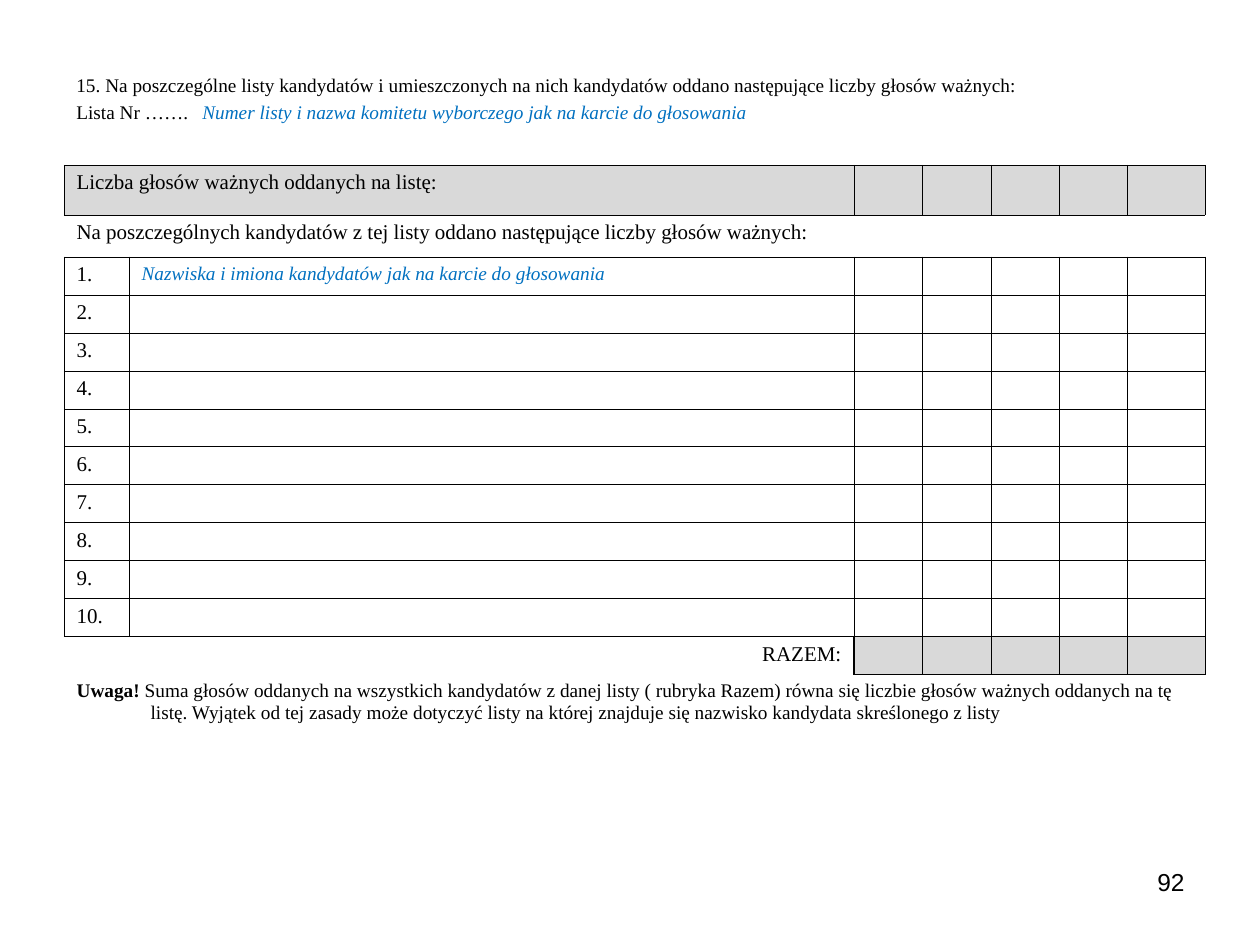
from dataclasses import dataclass
from itertools import cycle, islice
from typing import NamedTuple

from lxml.etree import SubElement
from pptx import Presentation
from pptx.dml.color import RGBColor
from pptx.enum.text import PP_ALIGN as Align
from pptx.oxml.ns import qn
from pptx.util import Emu, Pt

EMU_PER_PX = 914400 / 126


@dataclass(frozen=True)
class Theme:
    black: RGBColor = RGBColor(0, 0, 0)
    blue: RGBColor = RGBColor(0x00, 0x70, 0xC0)
    gray: RGBColor = RGBColor(0xD9, 0xD9, 0xD9)
    white: RGBColor = RGBColor(0xFF, 0xFF, 0xFF)
    serif: str = "Times New Roman"
    sans: str = "Arial"
    note: int = 11
    table: int = 12
    number: int = 14
    thin: float = 0.25
    thick: float = 1


THEME = Theme()


class Span(NamedTuple):
    text: str
    color: RGBColor = THEME.black
    italic: bool = False
    bold: bool = False


class Line(NamedTuple):
    spans: tuple[Span, ...]
    size: int = THEME.note
    font: str = THEME.serif
    align: Align = Align.LEFT
    hanging: int = 0
    tab: int = 0


class Entry(NamedTuple):
    column: int
    last_column: int
    line: Line | None = None
    fill: RGBColor = THEME.white
    borders: dict[str, float] = dict.fromkeys("LRTB", THEME.thin)


def px(length: int) -> Emu:
    return Emu(round(length * EMU_PER_PX))


def write_line(paragraph, line: Line) -> None:
    properties = paragraph._p.get_or_add_pPr()
    if line.hanging:
        properties.set("marL", str(px(line.hanging)))
        properties.set("indent", str(-px(line.hanging)))
    if line.tab:
        tabs = SubElement(properties, qn("a:tabLst"))
        SubElement(tabs, qn("a:tab"), pos=str(px(line.tab)), algn="l")
    paragraph.alignment = line.align
    paragraph.font.name = line.font
    paragraph.font.size = Pt(line.size)
    for span in line.spans:
        run = paragraph.add_run()
        run.text = span.text
        run.font.color.rgb = span.color
        if span.italic:
            run.font.italic = True
        if span.bold:
            run.font.bold = True


def add_text(slide, left: int, top: int, width: int, height: int, lines: list[Line]) -> None:
    frame = slide.shapes.add_textbox(px(left), px(top), px(width), px(height)).text_frame
    frame.word_wrap = True
    for index, line in enumerate(lines):
        paragraph = frame.add_paragraph() if index else frame.paragraphs[0]
        write_line(paragraph, line)
        if index:
            paragraph.space_before = Pt(2.5)


def set_borders(cell, borders: dict[str, float]) -> None:
    properties = cell._tc.get_or_add_tcPr()
    for side in "LRTB":
        width = borders.get(side, 0)
        border = SubElement(properties, qn(f"a:ln{side}"), w=str(Pt(width)))
        if width:
            fill = SubElement(border, qn("a:solidFill"))
            SubElement(fill, qn("a:srgbClr"), val=str(THEME.black))
        else:
            SubElement(border, qn("a:noFill"))


def fill_entry(table, row: int, entry: Entry) -> None:
    first = table.cell(row, entry.column)
    if entry.last_column > entry.column:
        first.merge(table.cell(row, entry.last_column))
    for column in range(entry.column, entry.last_column + 1):
        cell = table.cell(row, column)
        set_borders(cell, entry.borders)
        cell.fill.solid()
        cell.fill.fore_color.rgb = entry.fill
    if entry.line:
        write_line(first.text_frame.paragraphs[0], entry.line)
    else:
        first.margin_top = first.margin_bottom = 0
        first.text_frame.paragraphs[0].font.size = Pt(THEME.table)


def table_line(text: str, align: Align = Align.LEFT) -> Line:
    return Line((Span(text),), THEME.table, align=align)


def digit_boxes(fill: RGBColor, bottom: float = THEME.thin) -> list[Entry]:
    borders = dict.fromkeys("LRT", THEME.thin) | {"B": bottom}
    return [Entry(column, column, None, fill, borders) for column in range(2, 7)]


def table_rows() -> list[list[Entry]]:
    names = Line((Span("Nazwiska i imiona kandydatów jak na karcie do głosowania", THEME.blue, True),))
    warning = Line(
        (
            Span("Uwaga!", bold=True),
            Span(
                " Suma głosów oddanych na wszystkich kandydatów z danej listy ( rubryka Razem) "
                "równa się liczbie głosów ważnych oddanych na tę listę. Wyjątek od tej zasady może "
                "dotyczyć listy na której znajduje się nazwisko kandydata skreślonego z listy"
            ),
        ),
        hanging=74,
    )
    intro = table_line("Na poszczególnych kandydatów z tej listy oddano następujące liczby głosów ważnych:")
    candidates = [
        [Entry(0, 0, table_line(f"{number}.")), Entry(1, 1, names if number == 1 else None)]
        + digit_boxes(THEME.white)
        for number in range(1, 11)
    ]
    return [
        [Entry(0, 1, table_line("Liczba głosów ważnych oddanych na listę:"), THEME.gray)]
        + digit_boxes(THEME.gray),
        [Entry(0, 6, intro, borders={"T": THEME.thin, "B": THEME.thin})],
        *candidates,
        [Entry(0, 1, table_line("RAZEM:", Align.RIGHT), borders={"T": THEME.thin, "R": THEME.thick})]
        + digit_boxes(THEME.gray, THEME.thick),
        [Entry(0, 6, warning, borders={"T": 0})],
    ]


def add_vote_table(slide) -> None:
    widths = [65, 725, 68, 69, 68, 68, 78]
    heights = [50, 42, *islice(cycle((37, 38, 38, 38)), 11), 88]
    table = slide.shapes.add_table(
        len(heights), len(widths), px(64), px(165), px(sum(widths)), px(sum(heights))
    ).table
    table.first_row = table.horz_banding = False
    for column, width in zip(table.columns, widths):
        column.width = px(width)
    for row, height in zip(table.rows, heights):
        row.height = px(height)
    for index, entries in enumerate(table_rows()):
        for entry in entries:
            fill_entry(table, index, entry)


def main() -> None:
    presentation = Presentation()
    presentation.slide_width, presentation.slide_height = px(1260), px(945)
    slide = presentation.slides.add_slide(presentation.slide_layouts[6])
    heading = "15. Na poszczególne listy kandydatów i umieszczonych na nich kandydatów oddano następujące liczby głosów ważnych:"
    list_hint = Span("Numer listy i nazwa komitetu wyborczego jak na karcie do głosowania", THEME.blue, True)
    add_text(slide, 64, 67, 1134, 79, [
        Line((Span(heading),)),
        Line((Span("Lista Nr …….\t"), list_hint), tab=126),
    ])
    add_vote_table(slide)
    add_text(slide, 903, 861, 294, 66, [
        Line((Span("92"),), THEME.number, THEME.sans, Align.RIGHT),
    ])
    presentation.save("out.pptx")


if __name__ == "__main__":
    main()
